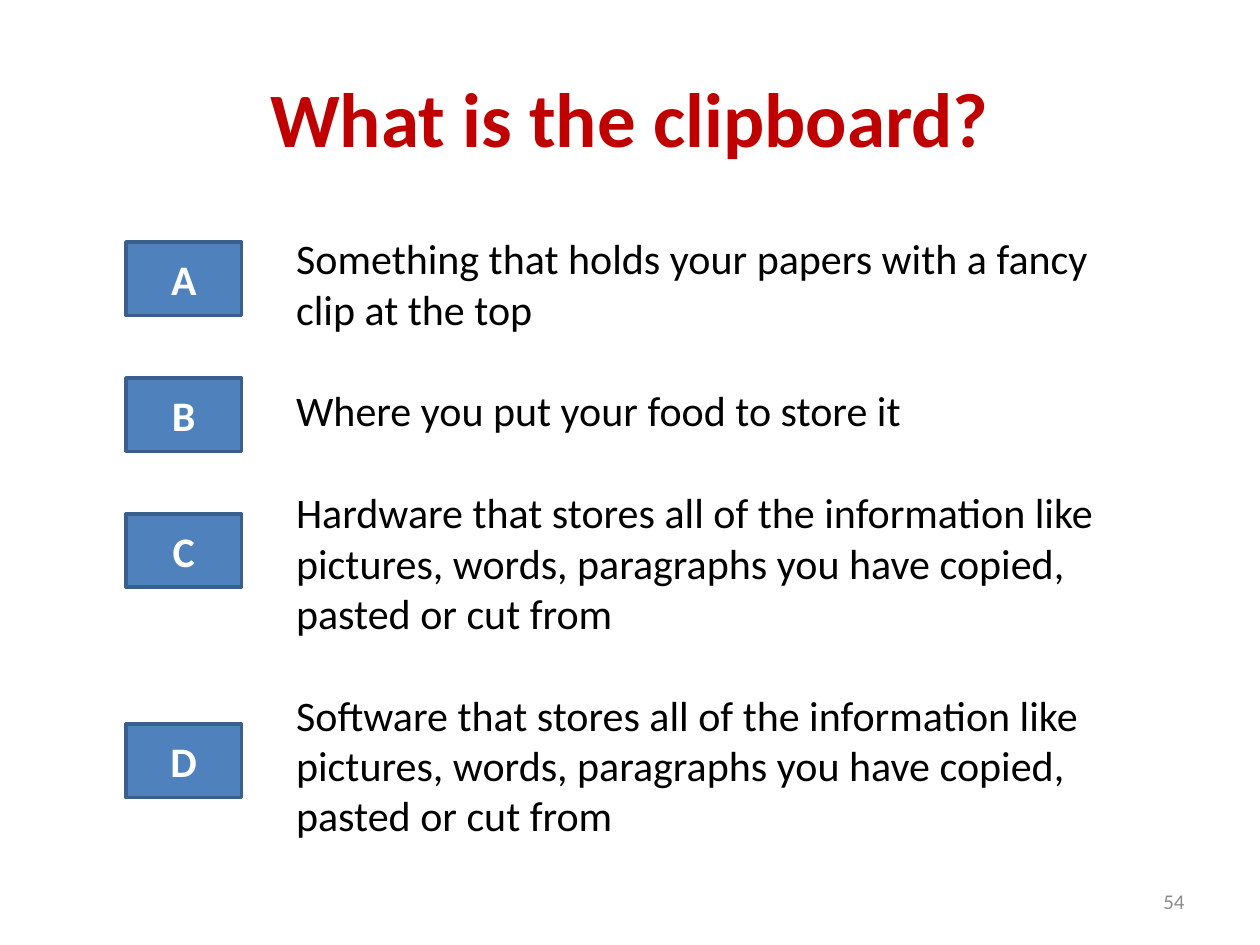
from dataclasses import dataclass

from pptx import Presentation
from pptx.dml.color import RGBColor
from pptx.enum.shapes import MSO_SHAPE as Shape
from pptx.enum.text import MSO_ANCHOR as Anchor, PP_ALIGN as Align
from pptx.slide import Slide
from pptx.text.text import _Paragraph as Paragraph
from pptx.util import Cm, Pt


@dataclass(frozen=True)
class Theme:
    font: str = "Calibri"
    title: RGBColor = RGBColor(0xC0, 0x00, 0x00)
    text: RGBColor = RGBColor(0x00, 0x00, 0x00)
    label: RGBColor = RGBColor(0xFF, 0xFF, 0xFF)
    number: RGBColor = RGBColor(0x8C, 0x8C, 0x8C)
    fill: RGBColor = RGBColor(0x4F, 0x81, 0xBD)
    line: RGBColor = RGBColor(0x3A, 0x5F, 0x8C)
    title_size: Pt = Pt(44)
    body_size: Pt = Pt(24)
    number_size: Pt = Pt(12)
    answer_gap: Pt = Pt(29.3)


@dataclass(frozen=True)
class Answer:
    letter: str
    top: float
    text: str


THEME = Theme()
STORES = "that stores all of the information like pictures, words, paragraphs you have copied, pasted or cut from"
ANSWERS = [
    Answer("A", 4.88, "Something that holds your papers with a fancy clip at the top"),
    Answer("B", 7.62, "Where you put your food to store it"),
    Answer("C", 10.36, f"Hardware {STORES}"),
    Answer("D", 14.6, f"Software {STORES}"),
]


def write(p: Paragraph, text: str, size: Pt, color: RGBColor,
          align: Align = Align.LEFT, bold: bool = False) -> None:
    p.text = text
    p.alignment = align
    p.font.name = THEME.font
    p.font.size = size
    p.font.bold = bold
    p.font.color.rgb = color


def add_title(s: Slide, text: str) -> None:
    sp = s.shapes.title
    sp.left, sp.top, sp.width, sp.height = Cm(1.27), Cm(0.76), Cm(22.86), Cm(3.18)
    sp.text_frame.vertical_anchor = Anchor.MIDDLE
    write(sp.text_frame.paragraphs[0], text, THEME.title_size, THEME.title, Align.CENTER, True)


def add_answer_texts(s: Slide, answers: list[Answer]) -> None:
    tf = s.shapes.add_textbox(Cm(5.72), Cm(4.57), Cm(17.35), Cm(12.57)).text_frame
    tf.word_wrap = True
    for i, answer in enumerate(answers):
        p = tf.add_paragraph() if i else tf.paragraphs[0]
        write(p, answer.text, THEME.body_size, THEME.text)
        p.space_before = THEME.answer_gap if i else Pt(0)


def add_letter(s: Slide, answer: Answer) -> None:
    sp = s.shapes.add_shape(Shape.RECTANGLE, Cm(2.54), Cm(answer.top), Cm(2.33), Cm(1.48))
    sp.shadow.inherit = False
    sp.fill.solid()
    sp.fill.fore_color.rgb = THEME.fill
    sp.line.color.rgb = THEME.line
    sp.line.width = Pt(2)
    sp.text_frame.vertical_anchor = Anchor.MIDDLE
    write(sp.text_frame.paragraphs[0], answer.letter, THEME.body_size, THEME.label, Align.CENTER, True)


def add_page_number(s: Slide, number: int) -> None:
    tf = s.shapes.add_textbox(Cm(18.2), Cm(17.65), Cm(5.93), Cm(1.02)).text_frame
    tf.word_wrap = True
    tf.vertical_anchor = Anchor.MIDDLE
    write(tf.paragraphs[0], str(number), THEME.number_size, THEME.number, Align.RIGHT)


def main() -> None:
    prs = Presentation()
    prs.slide_width, prs.slide_height = Cm(25.4), Cm(19.05)
    s = prs.slides.add_slide(prs.slide_layouts.get_by_name("Title Only"))
    add_title(s, "What is the clipboard?")
    add_page_number(s, 54)
    add_answer_texts(s, ANSWERS)
    for answer in ANSWERS:
        add_letter(s, answer)
    prs.save("out.pptx")


if __name__ == "__main__":
    main()
